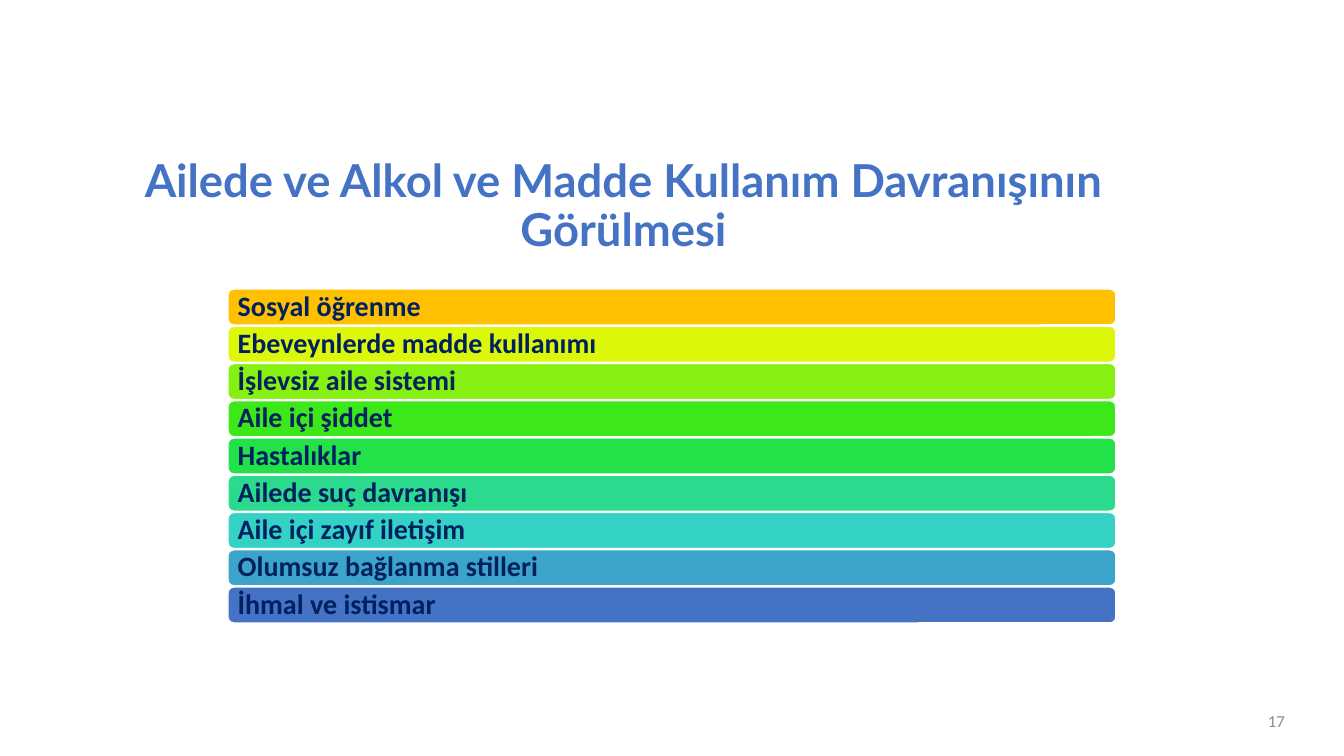
from pptx import Presentation
from pptx.dml.color import RGBColor
from pptx.enum.shapes import MSO_SHAPE
from pptx.enum.text import MSO_ANCHOR, PP_ALIGN
from pptx.util import Pt

ROUND = MSO_SHAPE.ROUNDED_RECTANGLE
LEFT, CENTER, RIGHT = PP_ALIGN.LEFT, PP_ALIGN.CENTER, PP_ALIGN.RIGHT
MIDDLE, BOTTOM = MSO_ANCHOR.MIDDLE, MSO_ANCHOR.BOTTOM

TITLE = "Ailede ve Alkol ve Madde Kullanım Davranışının Görülmesi"
NUMBER = "17"
CAUSES = [
    ("Sosyal öğrenme", "FFC000"),
    ("Ebeveynlerde madde kullanımı", "DCF709"),
    ("İşlevsiz aile sistemi", "86F011"),
    ("Aile içi şiddet", "3CE81A"),
    ("Hastalıklar", "23E148"),
    ("Ailede suç davranışı", "2BDA8C"),
    ("Aile içi zayıf iletişim", "33D2C5"),
    ("Olumsuz bağlanma stilleri", "3CA3CB"),
    ("İhmal ve istismar", "4472C4"),
]
BAR_X, BAR_W, BAR_H = 228, 888, 36
FIRST_Y, LAST_Y = 289, 587


def px(n):
    return round(n * 914400 / 100.8)


def color(code):
    return RGBColor.from_string(code)


def write(shape, text, font, size, code, bold, align, anchor, inset, space):
    frame = shape.text_frame
    frame.word_wrap = True
    frame.vertical_anchor = anchor
    frame.margin_left = frame.margin_right = px(inset)
    frame.margin_top = frame.margin_bottom = 0
    para = frame.paragraphs[0]
    para.alignment = align
    para.line_spacing = space
    run = para.add_run()
    run.text = text
    run.font.name = font
    run.font.size = Pt(size)
    run.font.bold = bold
    run.font.color.rgb = color(code)


def main():
    deck = Presentation()
    deck.slide_width, deck.slide_height = px(1344), px(756)
    shapes = deck.slides.add_slide(deck.slide_layouts[6]).shapes

    title = shapes.add_textbox(px(70), px(150), px(1107), px(106))
    write(title, TITLE, "Lato", 32.4, "4472C4", True, CENTER, BOTTOM, 10, 0.9)

    step = (LAST_Y - FIRST_Y) / (len(CAUSES) - 1)
    for i, (cause, fill) in enumerate(CAUSES):
        bar = shapes.add_shape(ROUND, px(BAR_X), px(FIRST_Y + i * step),
                               px(BAR_W), px(BAR_H))
        bar.shadow.inherit = False
        bar.fill.solid()
        bar.fill.fore_color.rgb = color(fill)
        bar.line.color.rgb = color("FFFFFF")
        bar.line.width = Pt(1)
        write(bar, cause, "Calibri", 20, "002060", True, LEFT, MIDDLE, 8, 0.9)

    number = shapes.add_textbox(px(993), px(701), px(302), px(40))
    write(number, NUMBER, "Calibri", 12, "8C8C8C", False, RIGHT, MIDDLE, 10, 1.0)

    deck.save("out.pptx")


if __name__ == "__main__":
    main()
